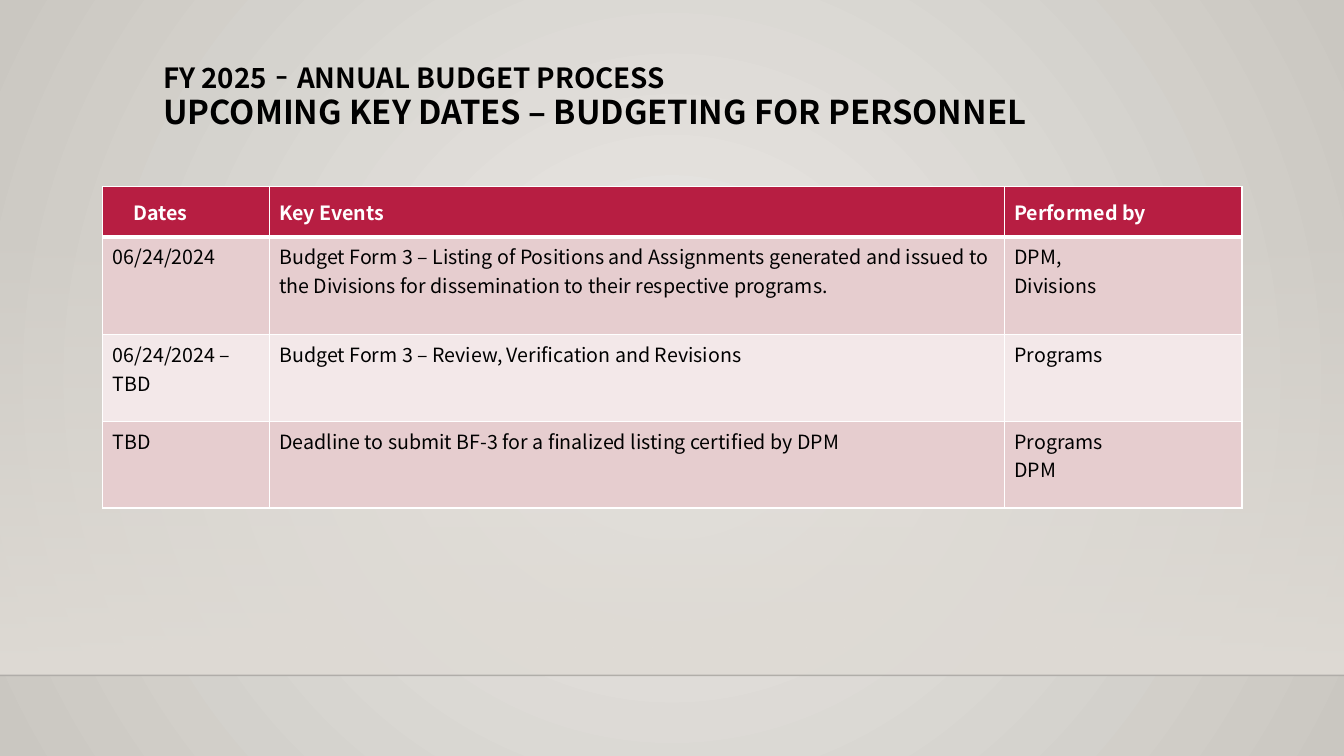
from dataclasses import dataclass

from lxml import etree
from pptx import Presentation
from pptx import util as u
from pptx.dml.color import RGBColor
from pptx.enum import shapes, text
from pptx.oxml import parse_xml
from pptx.oxml.ns import nsdecls, qn


@dataclass(frozen=True)
class Theme:
    font: str = "Noto Sans CJK TC"
    title_font: str = "Noto Sans CJK SC"
    ink: str = "000000"
    paper: str = "FFFFFF"
    accent: str = "B71E42"
    bands: tuple[str, str] = ("E6CDCF", "F3E8E9")
    glow: str = "ECEAE7"
    edge: str = "CAC7C1"
    floor: str = "DFDBD5"
    floor_line: str = "000001"
    kicker_size: float = 19.8
    gap_size: float = 27
    title_size: float = 23.4
    table_size: float = 14


@dataclass(frozen=True)
class KeyDate:
    dates: str
    event: str
    performers: str
    height: float  # percent of the slide's height


THEME = Theme()
WIDTH, HEIGHT = u.Inches(13.33), u.Inches(7.5)
FLOOR_TOP, FLOOR_LINE = 29.47, 89.33
COLUMNS = (12.38, 54.69, 17.7)
HEADER = KeyDate("Dates", "Key Events", "Performed by", 6.67)
KEY_DATES = (
    KeyDate("06/24/2024",
            "Budget Form 3 – Listing of Positions and Assignments generated and issued "
            "to the Divisions for dissemination to their respective programs.",
            "DPM,\nDivisions", 12.93),
    KeyDate("06/24/2024 – TBD", "Budget Form 3 – Review, Verification and Revisions",
            "Programs", 11.47),
    KeyDate("TBD", "Deadline to submit BF-3 for a finalized listing certified by DPM",
            "Programs\nDPM", 11.47),
)


def across(percent: float) -> int:
    return round(WIDTH * percent / 100)


def down(percent: float) -> int:
    return round(HEIGHT * percent / 100)


def write(paragraph, words: str, *, size: float, color: str = THEME.ink,
          font: str = THEME.font, bold: bool = False) -> None:
    run = paragraph.add_run()
    run.text = words
    run.font.size, run.font.name, run.font.bold = u.Pt(size), font, bold
    run.font.color.rgb = RGBColor.from_string(color)


def gradient(start: str, end: str, direction: str, start_alpha: int = 100):
    return parse_xml(
        f'<a:gradFill {nsdecls("a")} rotWithShape="1"><a:gsLst>'
        f'<a:gs pos="0"><a:srgbClr val="{start}"><a:alpha val="{start_alpha * 1000}"/></a:srgbClr></a:gs>'
        f'<a:gs pos="100000"><a:srgbClr val="{end}"/></a:gs></a:gsLst>{direction}</a:gradFill>')


def replace_fill(properties, fill) -> None:
    """Swap the solid fill already in the properties for another fill element."""
    properties.replace(properties.find(qn("a:solidFill")), fill)


def draw_backdrop(slide) -> None:
    background = slide.background.fill
    background.solid()
    background.fore_color.rgb = RGBColor.from_string(THEME.edge)
    circle = ('<a:path path="circle"><a:fillToRect l="50000" t="50000" '
              'r="50000" b="50000"/></a:path>')
    replace_fill(slide.element.find(".//" + qn("p:bgPr")),
                 gradient(THEME.glow, THEME.edge, circle))

    wall = slide.shapes.add_shape(shapes.MSO_SHAPE.RECTANGLE, 0, down(FLOOR_TOP),
                                  WIDTH, down(FLOOR_LINE - FLOOR_TOP))
    wall.shadow.inherit = False
    wall.line.fill.background()
    wall.fill.solid()
    replace_fill(wall.element.spPr,
                 gradient(THEME.floor, THEME.floor, '<a:lin ang="5400000" scaled="0"/>', 0))

    line = slide.shapes.add_connector(shapes.MSO_CONNECTOR.STRAIGHT, 0, down(FLOOR_LINE),
                                      WIDTH, down(FLOOR_LINE))
    line.line.width = u.Pt(1)
    line.line.color.rgb = RGBColor.from_string(THEME.floor_line)
    color = line.element.spPr.find(".//" + qn("a:srgbClr"))
    etree.SubElement(color, qn("a:alpha"), val="20000")
    etree.SubElement(line.element.spPr, qn("a:effectLst"))


def draw_title(slide) -> None:
    title = slide.shapes.title
    title.left, title.top = across(11.4), down(6.8)
    title.width, title.height = across(78.77), down(15.33)
    frame = title.text_frame
    frame.word_wrap = True
    frame.auto_size = text.MSO_AUTO_SIZE.NONE
    frame.vertical_anchor = text.MSO_ANCHOR.TOP
    paragraph = frame.paragraphs[0]
    paragraph.alignment = text.PP_ALIGN.LEFT
    paragraph.line_spacing = 0.88
    write(paragraph, "FY 2025", size=THEME.kicker_size, bold=True)
    write(paragraph, " ", size=THEME.gap_size, bold=True)
    write(paragraph, "- ", size=THEME.gap_size)
    write(paragraph, "ANNUAL BUDGET PROCESS", size=THEME.kicker_size, bold=True)
    paragraph.add_line_break()
    write(paragraph, "UPCOMING KEY DATES – BUDGETING FOR PERSONNEL",
          size=THEME.title_size, font=THEME.title_font, bold=True)


def style_cell(cell, fill: str, top: float, bottom: float) -> None:
    """Fill a cell and rule its sides; top and bottom are line widths in points."""
    cell.fill.solid()
    cell.fill.fore_color.rgb = RGBColor.from_string(fill)
    properties = cell._tc.get_or_add_tcPr()
    for index, (side, width) in enumerate((("L", 1), ("R", 1), ("T", top), ("B", bottom))):
        properties.insert(index, parse_xml(
            f'<a:ln{side} {nsdecls("a")} w="{u.Pt(width)}"><a:solidFill>'
            f'<a:srgbClr val="{THEME.paper}"/></a:solidFill></a:ln{side}>'))


def draw_table(slide) -> None:
    rows = (HEADER, *KEY_DATES)
    table = slide.shapes.add_table(
        len(rows), len(COLUMNS), across(7.65), down(24.67), across(sum(COLUMNS)),
        down(sum(row.height for row in rows))).table
    for column, share in zip(table.columns, COLUMNS):
        column.width = across(share)
    for number, row in enumerate(rows):
        header = number == 0
        table.rows[number].height = down(row.height)
        fill = THEME.accent if header else THEME.bands[(number - 1) % 2]
        for cell, words in zip(table.rows[number].cells, (row.dates, row.event, row.performers)):
            style_cell(cell, fill, top=3 if number == 1 else 1, bottom=3 if header else 1)
            cell.vertical_anchor = text.MSO_ANCHOR.MIDDLE if header else text.MSO_ANCHOR.TOP
            for index, line in enumerate(words.split("\n")):
                frame = cell.text_frame
                paragraph = frame.add_paragraph() if index else frame.paragraphs[0]
                write(paragraph, line, size=THEME.table_size, bold=header,
                      color=THEME.paper if header else THEME.ink)
    dates_heading = table.cell(0, 0).text_frame.paragraphs[0]
    dates_heading._p.get_or_add_pPr().set("marL", str(across(1.5)))


def main() -> None:
    presentation = Presentation()
    presentation.slide_width, presentation.slide_height = WIDTH, HEIGHT
    slide = presentation.slides.add_slide(presentation.slide_layouts.get_by_name("Title Only"))
    draw_backdrop(slide)
    draw_title(slide)
    draw_table(slide)
    presentation.save("out.pptx")


if __name__ == "__main__":
    main()
